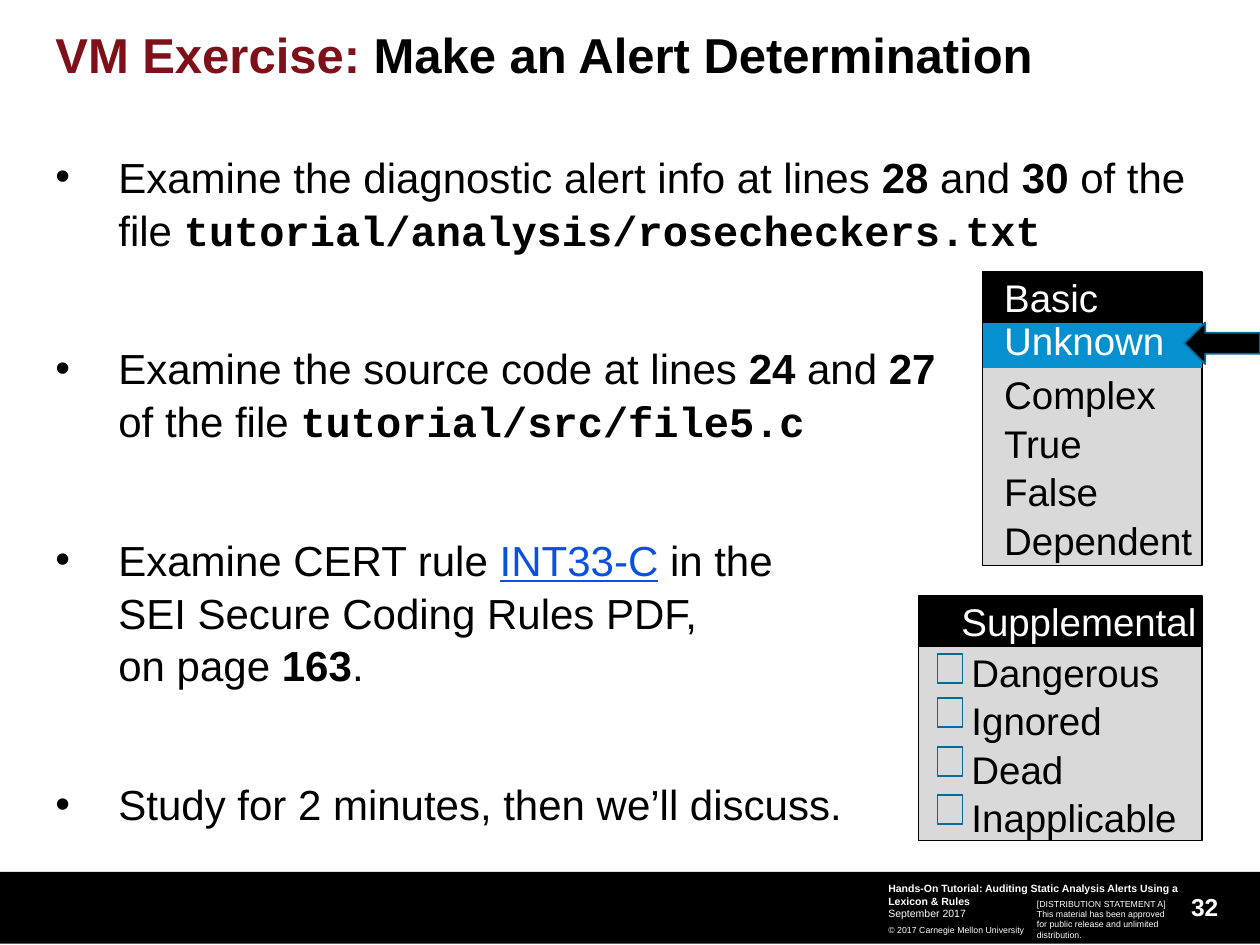
from lxml import etree
from pptx import Presentation
from pptx.dml.color import RGBColor
from pptx.enum.shapes import MSO_SHAPE as Shape
from pptx.enum.text import MSO_ANCHOR as Anchor, PP_ALIGN as Align
from pptx.oxml.ns import qn
from pptx.util import Inches, Pt

BLACK = RGBColor(0x00, 0x00, 0x00)
WHITE = RGBColor(0xFF, 0xFF, 0xFF)
MAROON = RGBColor(0x7E, 0x10, 0x1A)
LINK_BLUE = RGBColor(0x0A, 0x50, 0xE1)
GREY = RGBColor(0xD9, 0xD9, 0xD9)
HIGHLIGHT = RGBColor(0x07, 0x90, 0xCF)
OUTLINE = RGBColor(0x05, 0x6B, 0x99)

BOLD = {"bold": True}
CODE = {"bold": True, "font": "Courier New"}
LINK = {"color": LINK_BLUE, "underline": True}

BULLETS = [
    [("Examine the diagnostic alert info at lines ", {}), ("28", BOLD),
     (" and ", {}), ("30", BOLD), (" of the file ", {}),
     ("tutorial/analysis/rosecheckers.txt", CODE)],
    [("Examine the source code at lines ", {}), ("24", BOLD), (" and ", {}),
     ("27\n", BOLD), ("of the file ", {}), ("tutorial/src/file5.c", CODE)],
    [("Examine CERT rule ", {}), ("INT33-C", LINK),
     (" in the\nSEI Secure Coding Rules PDF,\non page ", {}),
     ("163", BOLD), (".", {})],
    [("Study for 2 minutes, then we’ll discuss.", {})],
]


def add_run(p, text, size, color=BLACK, bold=False, font="Arial", underline=False):
    for i, line in enumerate(text.split("\n")):
        if i:
            p.add_line_break()
        if line:
            r = p.add_run()
            r.text = line
            r.font.size = Pt(size)
            r.font.name = font
            r.font.bold = bold
            r.font.underline = underline
            r.font.color.rgb = color


def set_frame(tf, anchor=Anchor.TOP, left=0, top=0):
    tf.word_wrap = True
    tf.vertical_anchor = anchor
    tf.margin_left, tf.margin_top = Inches(left), Inches(top)
    tf.margin_right = tf.margin_bottom = 0


def add_text(slide, box, paragraphs, size, color=BLACK, align=Align.LEFT,
             anchor=Anchor.TOP, spacing=1.0):
    tf = slide.shapes.add_textbox(*map(Inches, box)).text_frame
    set_frame(tf, anchor)
    for i, runs in enumerate(paragraphs):
        p = tf.add_paragraph() if i else tf.paragraphs[0]
        p.alignment = align
        p.line_spacing = spacing
        for text, style in runs:
            add_run(p, text, **{"size": size, "color": color, **style})
    return tf


def add_bullets(slide):
    tf = add_text(slide, (0.44, 1.18, 9.1, 5.48), BULLETS, 24, spacing=1.05)
    for i, p in enumerate(tf.paragraphs):
        if i:
            p.space_before = Pt(49)
        pPr = p._p.get_or_add_pPr()
        pPr.set("marL", str(Inches(0.5)))
        pPr.set("indent", str(Inches(-0.5)))
        etree.SubElement(pPr, qn("a:buFont")).set("typeface", "Arial")
        etree.SubElement(pPr, qn("a:buChar")).set("char", "•")


def add_box(slide, box, fill=None, line=None, width=0.75, kind=Shape.RECTANGLE):
    sp = slide.shapes.add_shape(kind, *map(Inches, box))
    sp.shadow.inherit = False
    if fill is None:
        sp.fill.background()
    else:
        sp.fill.solid()
        sp.fill.fore_color.rgb = fill
    if line is None:
        sp.line.fill.background()
    else:
        sp.line.color.rgb = line
        sp.line.width = Pt(width)
    return sp


def add_label_box(slide, box, text, fill, color, left, top=0, line=BLACK, spacing=1.05):
    sp = add_box(slide, box, fill, line)
    set_frame(sp.text_frame, left=left, top=top)
    p = sp.text_frame.paragraphs[0]
    p.alignment = Align.LEFT
    p.line_spacing = spacing
    add_run(p, text, 22, color)


def add_basic_menu(slide):
    x, w = 7.8, 1.74
    add_label_box(slide, (x, 2.56, w, 1.93), "Complex\nTrue\nFalse\nDependent",
                  GREY, BLACK, 0.17, top=0.37)
    add_label_box(slide, (x, 2.56, w, 0.36), "Unknown", HIGHLIGHT, WHITE, 0.17,
                  line=None, spacing=0.9)
    add_box(slide, (9.4, 2.56, 0.6, 0.33), BLACK, OUTLINE, 1, Shape.LEFT_ARROW)
    add_label_box(slide, (x, 2.16, w, 0.4), "Basic", BLACK, WHITE, 0.17)


def add_supplemental_menu(slide):
    x, w = 7.29, 2.25
    add_label_box(slide, (x, 5.13, w, 1.54), "Dangerous\nIgnored\nDead\nInapplicable",
                  GREY, BLACK, 0.42)
    for y in (5.19, 5.54, 5.93, 6.31):
        add_box(slide, (7.44, y, 0.2, 0.23), line=OUTLINE, width=1)
    add_label_box(slide, (x, 4.73, w, 0.4), "Supplemental", BLACK, WHITE, 0.34)


def add_footer(slide):
    add_box(slide, (0, 6.92, 10, 0.57), BLACK)
    add_text(slide, (9.11, 7, 0.56, 0.4), [[("32", BOLD)]], 14, WHITE,
             Align.RIGHT, Anchor.MIDDLE)
    tf = add_text(slide, (7.05, 7, 2.32, 0.43), [
        [("Hands-On Tutorial: Auditing Static Analysis Alerts Using a Lexicon & Rules", BOLD)],
        [("September 2017", {})],
        [("© 2017 Carnegie Mellon University", {"size": 5})],
    ], 6, WHITE)
    tf.paragraphs[-1].line_spacing = 1.5
    add_text(slide, (8.23, 7.13, 1.1, 0.34), [
        [("[DISTRIBUTION STATEMENT A] This material has been approved "
          "for public release and unlimited distribution.", {})],
    ], 5, WHITE)


def main():
    prs = Presentation()
    prs.slide_width, prs.slide_height = Inches(10), Inches(7.5)
    slide = prs.slides.add_slide(prs.slide_layouts[6])
    add_footer(slide)
    add_text(slide, (0.44, 0.25, 9.36, 0.73), [
        [("VM Exercise:", {"bold": True, "color": MAROON}),
         (" Make an Alert Determination", BOLD)],
    ], 28, spacing=0.9)
    add_bullets(slide)
    add_supplemental_menu(slide)
    add_basic_menu(slide)
    prs.save("out.pptx")


if __name__ == "__main__":
    main()
